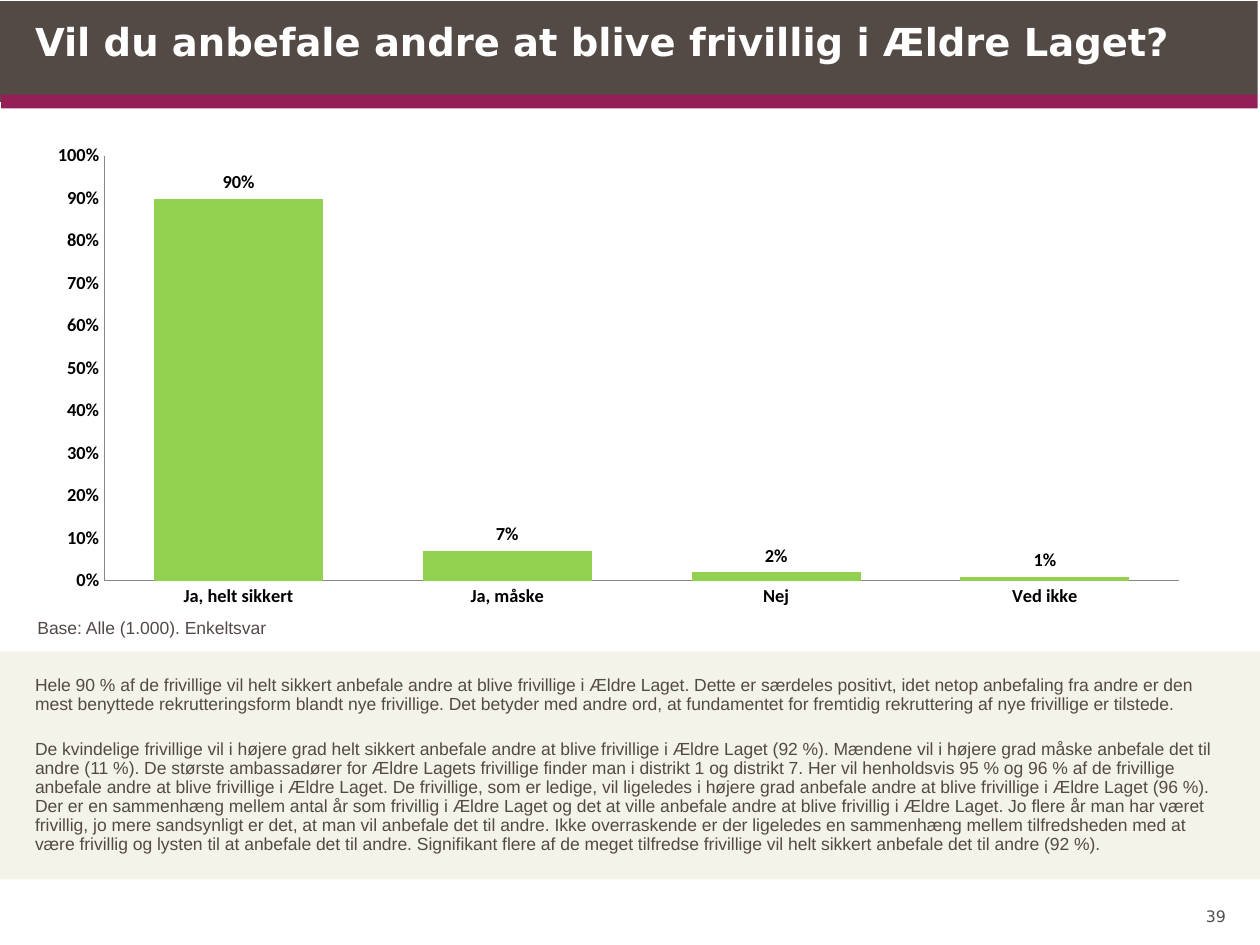
"""Build a slide with a recommendation chart and its commentary."""
from lxml import etree
from pptx import Presentation
from pptx.chart.data import CategoryChartData
from pptx.dml.color import RGBColor
from pptx.enum import chart as kinds, shapes, text
from pptx.oxml import ns
from pptx.util import Pt

COLORS = {
    "brown": "534A46", "plum": "941F57", "beige": "F3F3E9", "white": "FFFFFF",
    "grey": "505050", "green": "92D050", "black": "000000", "axis": "868686",
}
BANDS = [
    (0, 0.7, 720, 57.6, "brown"),
    (0.7, 54, 718.6, 7.9, "plum"),
    (718.6, 0, 1.4, 540, "white"),
    (0, 372.2, 720, 130.3, "beige"),
]
ANSWERS = {"Ja, helt sikkert": 0.9, "Ja, måske": 0.07, "Nej": 0.02, "Ved ikke": 0.01}
PLOT = {"x": 0.059, "y": 0.02, "w": 0.903, "h": 0.876}
TITLE = "Vil du anbefale andre at blive frivillig i Ældre Laget?"
COMMENTS = [
    [
        "Hele 90 % af de frivillige vil helt sikkert anbefale andre at blive frivillige i "
        "Ældre Laget.",
        "Dette er særdeles positivt, idet netop anbefaling fra andre er den mest "
        "benyttede rekrutteringsform blandt nye frivillige.",
        "Det betyder med andre ord, at fundamentet for fremtidig rekruttering af nye "
        "frivillige er tilstede.",
    ],
    [
        "De kvindelige frivillige vil i højere grad helt sikkert anbefale andre at blive "
        "frivillige i Ældre Laget (92 %).",
        "Mændene vil i højere grad måske anbefale det til andre (11 %).",
        "De største ambassadører for Ældre Lagets frivillige finder man i distrikt 1 og "
        "distrikt 7.",
        "Her vil henholdsvis 95 % og 96 % af de frivillige anbefale andre at blive "
        "frivillige i Ældre Laget.",
        "De frivillige, som er ledige, vil ligeledes i højere grad anbefale andre at blive "
        "frivillige i Ældre Laget (96 %).",
        "Der er en sammenhæng mellem antal år som frivillig i Ældre Laget og det at ville "
        "anbefale andre at blive frivillig i Ældre Laget.",
        "Jo flere år man har været frivillig, jo mere sandsynligt er det, at man vil "
        "anbefale det til andre.",
        "Ikke overraskende er der ligeledes en sammenhæng mellem tilfredsheden med at være "
        "frivillig og lysten til at anbefale det til andre.",
        "Signifikant flere af de meget tilfredse frivillige vil helt sikkert anbefale det "
        "til andre (92 %).",
    ],
]


def color(name):
    """Return a named colour."""
    return RGBColor.from_string(COLORS[name])


def style_font(font, face, size, tint, bold=False):
    """Set face, size, colour and weight of a font."""
    font.name, font.size, font.bold = face, Pt(size), bold
    font.color.rgb = color(tint)


def add_band(page, left, top, width, height, tint):
    """Add a plain filled rectangle."""
    band = page.shapes.add_shape(
        shapes.MSO_SHAPE.RECTANGLE, Pt(left), Pt(top), Pt(width), Pt(height))
    band.shadow.inherit = False
    band.fill.solid()
    band.fill.fore_color.rgb = color(tint)
    band.line.fill.background()


def fill_frame(frame, lines, face, size, tint, bold=False, anchor="TOP",
               align="LEFT", spacing=1.0, gap=0):
    """Write paragraphs in a frame without margins."""
    frame.word_wrap = True
    frame.auto_size = text.MSO_AUTO_SIZE.NONE
    frame.vertical_anchor = text.MSO_ANCHOR[anchor]
    frame.margin_left = frame.margin_right = frame.margin_top = frame.margin_bottom = 0
    for index, line in enumerate(lines):
        para = frame.add_paragraph() if index else frame.paragraphs[0]
        para.text = line
        para.alignment = text.PP_ALIGN[align]
        para.line_spacing = spacing
        para.space_before = Pt(gap if index else 0)
        style_font(para.font, face, size, tint, bold)


def add_text(page, left, top, width, height, lines, *font, **layout):
    """Add a text box."""
    box = page.shapes.add_textbox(Pt(left), Pt(top), Pt(width), Pt(height))
    fill_frame(box.text_frame, lines, *font, **layout)


def place_title(page):
    """Move the title placeholder to the header, above the bands."""
    title = page.shapes.title
    title.left, title.top, title.width, title.height = Pt(20), Pt(10), Pt(680), Pt(49)
    fill_frame(title.text_frame, [TITLE], "DejaVu Sans", 22, "white", bold=True)
    title.element.getparent().append(title.element)


def style_axis(axis):
    """Give an axis its line and labels without ticks or grid."""
    axis.has_major_gridlines = False
    axis.major_tick_mark = axis.minor_tick_mark = kinds.XL_TICK_MARK.NONE
    axis.format.line.color.rgb = color("axis")
    axis.format.line.width = Pt(0.75)
    style_font(axis.tick_labels.font, "Calibri", 10.5, "black", True)


def set_plot_layout(chart):
    """Fix the inner plot area as fractions of the chart."""
    area = chart.plots[0]._element.getparent()
    for old in area.findall(ns.qn("c:layout")):
        area.remove(old)
    layout = etree.Element(ns.qn("c:layout"))
    area.insert(0, layout)
    manual = etree.SubElement(layout, ns.qn("c:manualLayout"))
    settings = {"layoutTarget": "inner", "xMode": "edge", "yMode": "edge", **PLOT}
    for key, value in settings.items():
        etree.SubElement(manual, ns.qn("c:" + key)).set("val", str(value))


def add_answer_chart(page):
    """Add the column chart of answers."""
    data = CategoryChartData(number_format="0%")
    data.categories = list(ANSWERS)
    data.add_series("Series 1", list(ANSWERS.values()))
    chart = page.shapes.add_chart(
        kinds.XL_CHART_TYPE.COLUMN_CLUSTERED,
        Pt(19.4), Pt(82.8), Pt(680.4), Pt(278), data).chart
    chart.has_legend = chart.has_title = False
    style_font(chart.font, "Calibri", 10, "black")
    for axis in (chart.category_axis, chart.value_axis):
        style_axis(axis)
    scale = chart.value_axis
    scale.minimum_scale, scale.maximum_scale, scale.major_unit = 0, 1, 0.1
    scale.tick_labels.number_format = "0%"
    scale.tick_labels.number_format_is_linked = False
    plot = chart.plots[0]
    plot.gap_width, plot.vary_by_categories = 59, False
    bars = plot.series[0]
    bars.format.fill.solid()
    bars.format.fill.fore_color.rgb = color("green")
    labels = bars.data_labels
    labels.show_value = True
    labels.number_format, labels.number_format_is_linked = "0%", False
    labels.position = kinds.XL_LABEL_POSITION.OUTSIDE_END
    style_font(labels.font, "Calibri", 10.5, "black", True)
    set_plot_layout(chart)


def main():
    """Build and save the deck."""
    deck = Presentation()
    deck.slide_width, deck.slide_height = Pt(720), Pt(540)
    page = deck.slides.add_slide(deck.slide_layouts[5])
    for band in BANDS:
        add_band(page, *band)
    place_title(page)
    add_text(page, 672.5, 499.7, 28, 29.5, ["39"], "DejaVu Sans", 9, "grey",
             anchor="BOTTOM", align="RIGHT")
    comments = [" ".join(sentences) for sentences in COMMENTS]
    add_text(page, 20, 372.2, 680.4, 130.3, comments, "Arial", 10, "brown",
             anchor="MIDDLE", spacing=0.9, gap=14.8)
    add_answer_chart(page)
    add_text(page, 21.4, 352.8, 207, 16, ["Base: Alle (1.000). Enkeltsvar"],
             "Arial", 10, "brown")
    deck.save("out.pptx")


if __name__ == "__main__":
    main()
